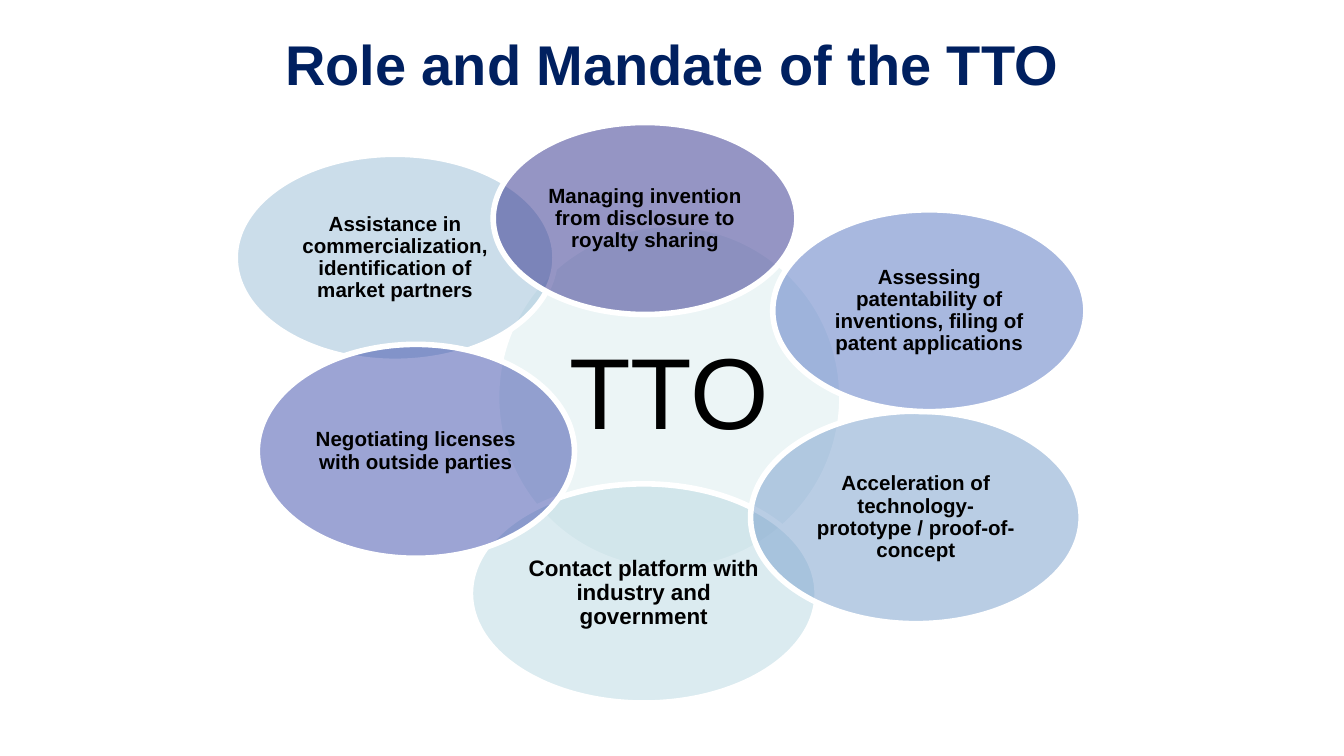
from lxml.etree import SubElement
from pptx import Presentation
from pptx.dml.color import RGBColor
from pptx.enum.shapes import MSO_SHAPE
from pptx.enum.text import MSO_ANCHOR, PP_ALIGN
from pptx.oxml.ns import qn
from pptx.util import Inches, Pt

WIDTH = Inches(10)
HEIGHT = WIDTH * 9 // 16
HUB = ("TTO", "DAEDEF", (36.95, 29.7, 25.7, 45.7))
ROLES = [
    ("Contact platform with industry and government", "B9D8E2", (35, 64, 25.8, 29), 12),
    ("Assistance in commercialization, identification of market partners", "98BDD6",
     (17.5, 20.4, 23.8, 27.4), 11),
    ("Acceleration of technology-\vprototype / proof-of-concept", "759CCB",
     (55.85, 54.4, 24.6, 28.1), 11),
    ("Assessing patentability of inventions, filing of patent applications", "5273C1",
     (57.5, 27.75, 23.3, 26.7), 11),
    ("Negotiating licenses with outside parties", "3A4BAA", (19.15, 45.55, 23.6, 28.3), 11),
    ("Managing invention from disclosure to royalty sharing", "2D2D8A",
     (36.7, 16.2, 22.6, 25.4), 11),
]


def paint(color_format, color):
    """Set a colour from a hex string."""
    color_format.rgb = RGBColor.from_string(color)


def place(left, top, width, height):
    """Turn percentages of the slide into lengths."""
    return (int(WIDTH * left / 100), int(HEIGHT * top / 100),
            int(WIDTH * width / 100), int(HEIGHT * height / 100))


def write(holder, text, size, color="000000", bold=True, spacing=0.9, inset=0.02):
    """Fill a shape with one centred paragraph."""
    frame = holder.text_frame
    frame.word_wrap = True
    frame.vertical_anchor = MSO_ANCHOR.MIDDLE
    frame.margin_left = frame.margin_right = Inches(inset)
    frame.margin_top = frame.margin_bottom = Inches(inset)
    paragraph = frame.paragraphs[0]
    paragraph.text = text
    paragraph.alignment = PP_ALIGN.CENTER
    paragraph.line_spacing = spacing
    paragraph.font.name = "Arial"
    paragraph.font.size = Pt(size)
    paragraph.font.bold = bold
    paint(paragraph.font.color, color)


def add_title(slide, text):
    """Add the heading across the top of the slide."""
    title = slide.shapes.add_textbox(*place(0, 0, 100, 16.7))
    write(title, text, size=30, color="002060", spacing=1, inset=0.05)


def add_bubble(slide, text, color, area, size, **text_format):
    """Add a half-transparent labelled ellipse with a white outline."""
    bubble = slide.shapes.add_shape(MSO_SHAPE.OVAL, *place(*area))
    bubble.shadow.inherit = False
    bubble.fill.solid()
    paint(bubble.fill.fore_color, color)
    tint = bubble.fill._xPr.find(qn("a:solidFill"))[0]
    SubElement(tint, qn("a:alpha"), val="50000")
    paint(bubble.line.color, "FFFFFF")
    bubble.line.width = Pt(3)
    write(bubble, text, size, **text_format)


def main():
    """Build the slide and save it."""
    deck = Presentation()
    deck.slide_width, deck.slide_height = WIDTH, HEIGHT
    slide = deck.slides.add_slide(deck.slide_layouts[6])
    add_bubble(slide, *HUB, size=54, bold=False, inset=0.07)
    for role in ROLES:
        add_bubble(slide, *role)
    add_title(slide, "Role and Mandate of the TTO")
    deck.save("out.pptx")


if __name__ == "__main__":
    main()
